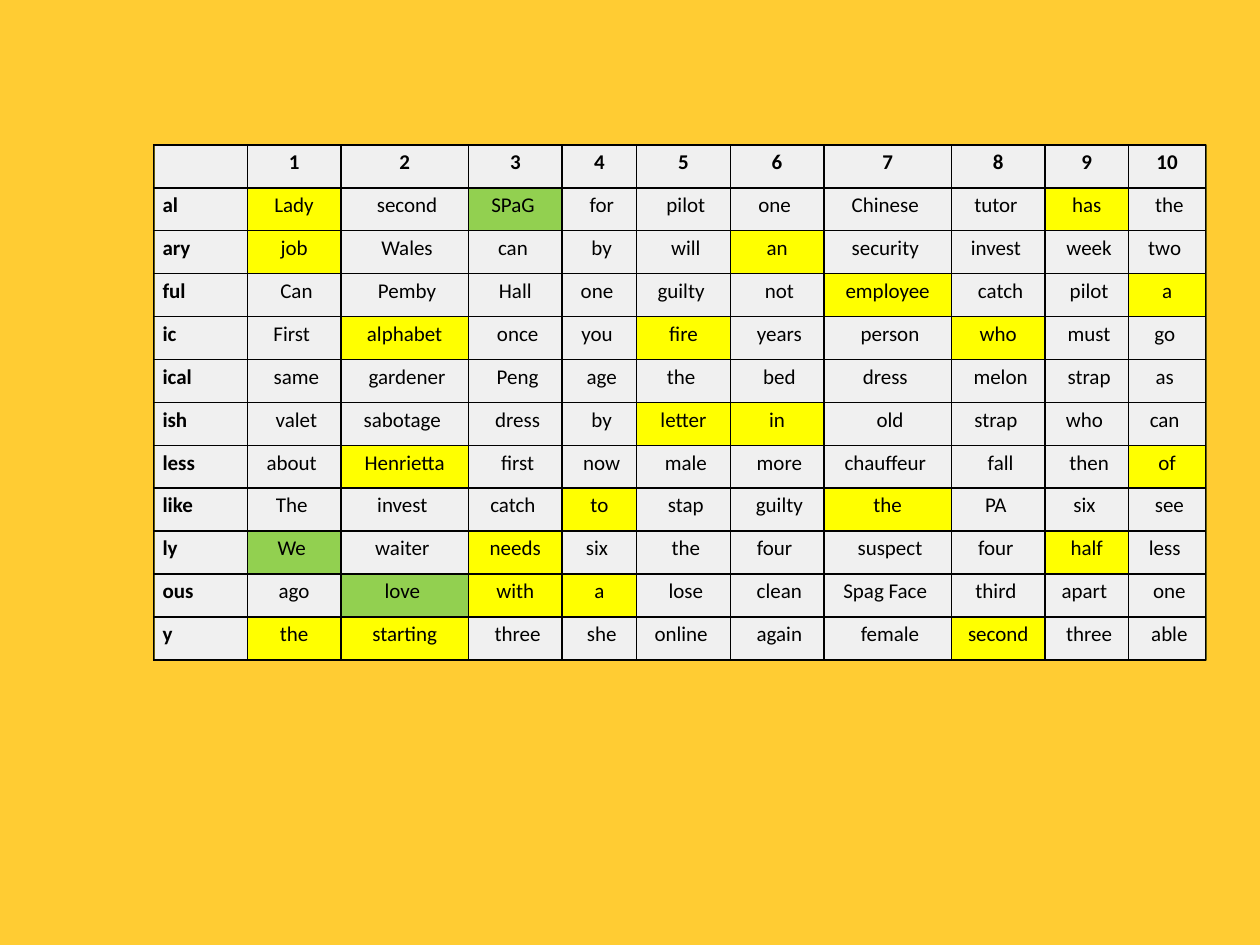
from pptx import Presentation
from pptx.dml.color import RGBColor
from pptx.enum.shapes import MSO_SHAPE
from pptx.enum.text import PP_ALIGN
from pptx.oxml import parse_xml
from pptx.oxml.ns import nsdecls
from pptx.util import Inches, Pt

RECTANGLE = MSO_SHAPE.RECTANGLE
LEFT, CENTER = PP_ALIGN.LEFT, PP_ALIGN.CENTER

GOLD, GREY, OLIVE, BLACK = "FFCC33", "F0F0F0", "5F5A0E", "000000"
HIGHLIGHTS = {"*": "FFFF00", "+": "92D050"}
NBSP = chr(160)

GRID_AT = [Inches(v) for v in (1.22, 1.15, 8.35, 4.09)]
COLUMN_SHARES = [0.74, 0.74, 1.01, 0.74, 0.59, 0.74, 0.74, 1.01, 0.74, 0.66, 0.61]

# "*" marks a yellow cell, "+" a green cell, "_" a non-breaking space.
WORDS = """\
|1|2|3|4|5|6|7|8|9|10
al|*Lady|_second|+SPaG_|_for|_pilot|one_|Chinese_|tutor_|*has|_the
ary|*job|_Wales|can_|_by|_will|*an|security_|invest_|_week|two_
ful|_Can|_Pemby|Hall|one_|guilty_|_not|*employee|_catch|_pilot|*a
ic|First_|*alphabet|_once|you_|*fire|_years|_person|*who|_must|go_
ical|_same|_gardener|_Peng|_age|the_|_bed|dress_|_melon|_strap|as_
ish|_valet|sabotage_|_dress|_by|*letter|*in|_old|strap_|who_|can_
less|about_|*Henrietta|_first|_now|_male|_more|chauffeur_|_fall|_then|*of
like|The_|invest_|catch_|*to|_stap|_guilty|*the|PA_|six_|_see
ly|+We_|waiter_|*needs|six_|_the|four_|_suspect|four_|*half|less_
ous|ago|+love_|*with|*a|_lose|_clean|Spag Face_|third_|apart_|_one
y|*the|*starting|_three|_she|online_|_again|_female|*second|_three|_able"""


def color(value):
    return RGBColor.from_string(value)


def add_panel(slide):
    s = slide.shapes.add_shape(RECTANGLE, *GRID_AT)
    s.shadow.inherit = False
    s.fill.solid()
    s.fill.fore_color.rgb = color(GREY)
    s.line.color.rgb = color(OLIVE)
    s.line.width = Pt(1)


def set_borders(cell):
    """Draw all four sides; borders must come before the fill in the XML."""
    tc_pr = cell._tc.get_or_add_tcPr()
    for i, side in enumerate(("lnL", "lnR", "lnT", "lnB")):
        tc_pr.insert(i, parse_xml(
            f'<a:{side} {nsdecls("a")} w="{Pt(1)}"><a:solidFill>'
            f'<a:srgbClr val="{BLACK}"/></a:solidFill></a:{side}>'))


def fill_cell(cell, entry, is_heading, align):
    margins = {"margin_left": 0.07, "margin_right": 0.07,
               "margin_top": 0, "margin_bottom": 0}
    for name, value in margins.items():
        setattr(cell, name, Inches(value))

    highlight = HIGHLIGHTS.get(entry[:1])
    if highlight:
        cell.fill.solid()
        cell.fill.fore_color.rgb = color(highlight)
    else:
        cell.fill.background()
    set_borders(cell)

    if entry:
        p = cell.text_frame.paragraphs[0]
        p.alignment = align
        p.line_spacing = 1.19
        r = p.add_run()
        r.text = entry.lstrip("*+").replace("_", NBSP)
        font = {"name": "Calibri", "size": Pt(12), "bold": is_heading}
        for name, value in font.items():
            setattr(r.font, name, value)
        r.font.color.rgb = color(BLACK)


def add_word_grid(slide):
    rows = [line.split("|") for line in WORDS.splitlines()]
    left, top, width, height = GRID_AT
    table = slide.shapes.add_table(
        len(rows), len(COLUMN_SHARES), left, top, width, height).table
    table.first_row = table.horz_banding = False
    for column, share in zip(table.columns, COLUMN_SHARES):
        column.width = int(width * share / sum(COLUMN_SHARES))
    for i, row in enumerate(rows):
        table.rows[i].height = height // len(rows)
        for j, entry in enumerate(row):
            fill_cell(table.cell(i, j), entry, i == 0 or j == 0,
                      CENTER if j else LEFT)


def main():
    prs = Presentation()
    prs.slide_width, prs.slide_height = Inches(10), Inches(7.5)
    slide = prs.slides.add_slide(prs.slide_layouts[6])
    slide.background.fill.solid()
    slide.background.fill.fore_color.rgb = color(GOLD)
    add_panel(slide)
    add_word_grid(slide)
    prs.save("out.pptx")


if __name__ == "__main__":
    main()
